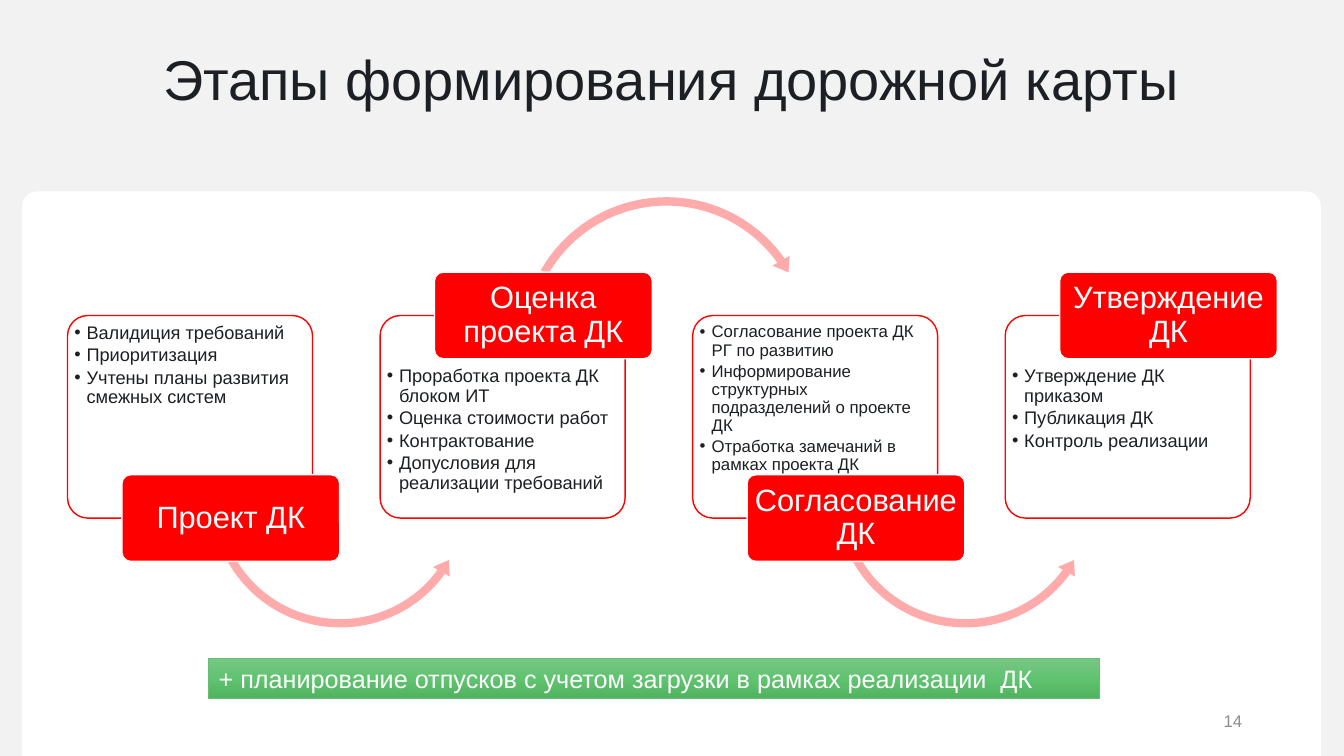
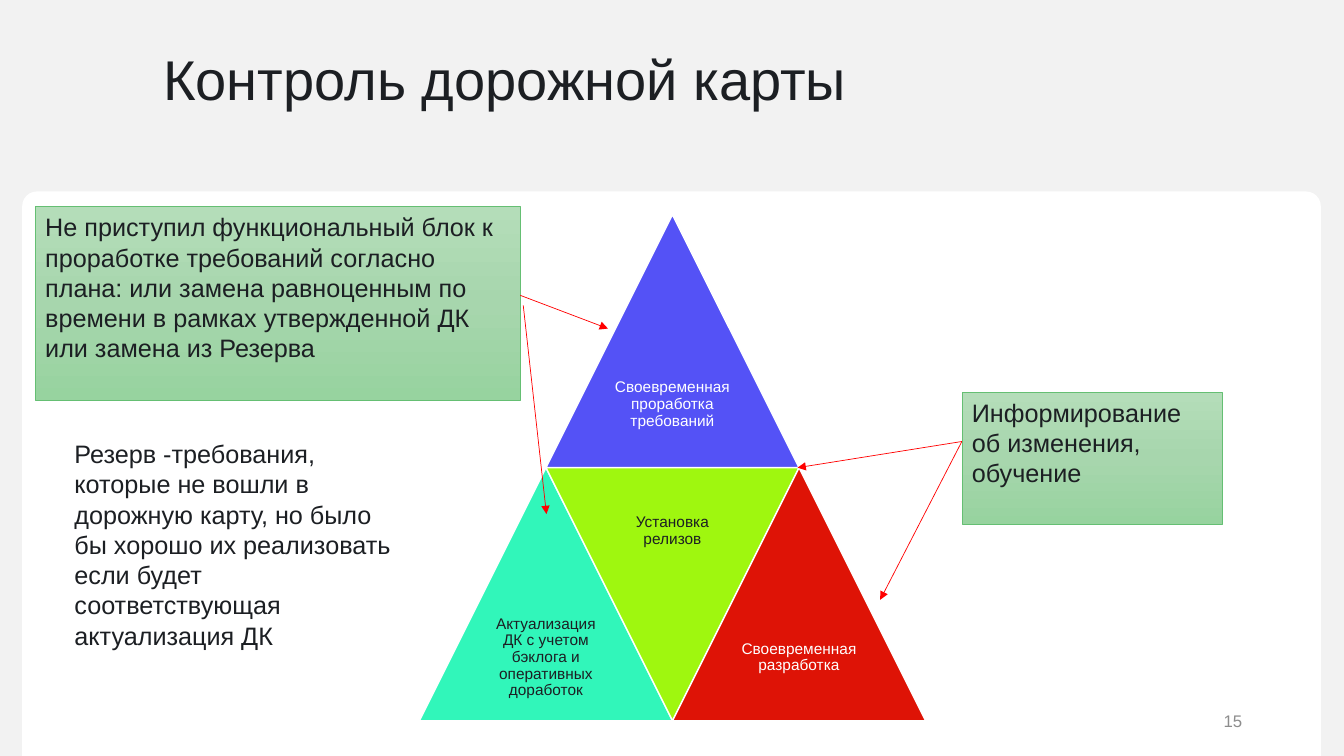
from dataclasses import dataclass
from copy import deepcopy

from lxml.etree import SubElement
from pptx import Presentation
from pptx.dml.color import RGBColor
from pptx.enum.shapes import MSO_CONNECTOR, MSO_SHAPE
from pptx.enum.text import MSO_ANCHOR, PP_ALIGN
from pptx.oxml.ns import qn
from pptx.shapes.autoshape import Shape
from pptx.slide import Slide
from pptx.util import Inches, Pt

FONT = "Arial"
BACKDROP, WHITE, INK, GRAY = "F2F2F2", "FFFFFF", "1C1F23", "8D8D8D"
RED, PINK, GREEN_EDGE = "FF0000", "FFABAB", "65BF73"
VIVID_GREENS = ("79C684", "60C370", "51B360")
PALE_GREENS = ("B4DDB9", "A7D6AD", "97D39F")

CARD_LEFT, CARD_TOP, CARD_PITCH = 0.67, 3.13, 3.1
TAG_SHIFT, TAG_HIGH, TAG_LOW = 0.54, 2.7, 4.71
APEX_X, APEX_Y, SIDE = 6.67, 2.13, 2.51


@dataclass(frozen=True)
class Area:
    left: float
    top: float
    width: float
    height: float

    def lengths(self) -> list[Inches]:
        return [Inches(n) for n in (self.left, self.top, self.width, self.height)]


@dataclass(frozen=True)
class TextStyle:
    size: float
    color: str = INK
    align: PP_ALIGN = PP_ALIGN.LEFT
    anchor: MSO_ANCHOR = MSO_ANCHOR.TOP
    spacing: float = 1.0
    after: float = 0
    bullet: bool = False
    insets: tuple[float, float, float, float] = (0.1, 0.05, 0.1, 0.05)


@dataclass(frozen=True)
class Stage:
    name: str
    tasks: tuple[str, ...]
    size: float = 13


@dataclass(frozen=True)
class Triangle:
    label: str
    column: float
    row: int
    fill: str
    ink: str
    flipped: bool = False


@dataclass(frozen=True)
class Arrow:
    start: tuple[float, float]
    end: tuple[float, float]


STAGES = (
    Stage("Проект ДК", (
        "Валидиция требований",
        "Приоритизация",
        "Учтены планы развития смежных систем",
    )),
    Stage("Оценка проекта ДК", (
        "Проработка проекта ДК блоком ИТ",
        "Оценка стоимости работ",
        "Контрактование",
        "Допусловия для реализации требований",
    )),
    Stage("Согласование ДК", (
        "Согласование проекта ДК РГ по развитию",
        "Информирование структурных подразделений о проекте ДК",
        "Отработка замечаний в рамках проекта ДК",
    ), 12),
    Stage("Утверждение ДК", (
        "Утверждение ДК приказом",
        "Публикация ДК",
        "Контроль реализации",
    )),
)

# Columns count triangle sides from the apex; rows count down from the top.
TRIANGLES = (
    Triangle("Своевременная проработка требований", 0, 0, "5452F6", WHITE),
    Triangle("Актуализация ДК с учетом бэклога и оперативных доработок",
             -0.5, 1, "31F6BA", INK),
    Triangle("Установка релизов", 0, 1, "9FF70F", INK, flipped=True),
    Triangle("Своевременная разработка", 0.5, 1, "DE1306", WHITE),
)

ARROWS = (
    Arrow((5.19, 3.03), (5.42, 5.1)),
    Arrow((5.16, 2.93), (6.03, 3.26)),
    Arrow((9.54, 4.38), (7.91, 4.64)),
    Arrow((9.54, 4.38), (8.73, 5.95)),
)


def rgb(color: str) -> RGBColor:
    return RGBColor.from_string(color)


def add_bullet(para) -> None:
    properties = para._p.get_or_add_pPr()
    properties.set("marL", str(Inches(0.12)))
    properties.set("indent", str(Inches(-0.12)))
    SubElement(properties, qn("a:buFont")).set("typeface", FONT)
    SubElement(properties, qn("a:buChar")).set("char", "•")


def write(box: Shape, lines: tuple[str, ...], style: TextStyle) -> None:
    frame = box.text_frame
    frame.word_wrap = True
    frame.vertical_anchor = style.anchor
    (frame.margin_left, frame.margin_top,
     frame.margin_right, frame.margin_bottom) = map(Inches, style.insets)
    for index, line in enumerate(lines):
        para = frame.add_paragraph() if index else frame.paragraphs[0]
        para.text = line
        if style.bullet:
            add_bullet(para)
        para.alignment = style.align
        para.line_spacing = style.spacing
        para.space_after = Pt(style.after)
        para.font.name = FONT
        para.font.size = Pt(style.size)
        para.font.color.rgb = rgb(style.color)


def add_text(page: Slide, area: Area, text: str, style: TextStyle) -> None:
    write(page.shapes.add_textbox(*area.lengths()), (text,), style)


def add_figure(page: Slide, kind: MSO_SHAPE, area: Area, fill: str,
               line: str | None = None,
               adjustments: tuple[float, ...] = ()) -> Shape:
    figure = page.shapes.add_shape(kind, *area.lengths())
    figure.shadow.inherit = False
    figure.fill.solid()
    figure.fill.fore_color.rgb = rgb(fill)
    if line:
        figure.line.color.rgb = rgb(line)
        figure.line.width = Pt(1)
    else:
        figure.line.fill.background()
    for index, value in enumerate(adjustments):
        figure.adjustments[index] = value
    return figure


def add_green_note(page: Slide, area: Area, text: str,
                   greens: tuple[str, str, str], ink: str) -> None:
    note = add_figure(page, MSO_SHAPE.RECTANGLE, area, greens[0], GREEN_EDGE)
    note.line.width = Pt(0.5)
    note.fill.gradient()
    note.fill.gradient_angle = 270
    stops = note.element.spPr.find(".//" + qn("a:gsLst"))
    stops.append(deepcopy(stops[-1]))
    for index, stop in enumerate(note.fill.gradient_stops):
        stop.position = index / 2
        stop.color.rgb = rgb(greens[index])
    write(note, (text,), TextStyle(18, ink))


def add_arrow(page: Slide, arrow: Arrow) -> None:
    ends = [Inches(n) for n in (*arrow.start, *arrow.end)]
    connector = page.shapes.add_connector(MSO_CONNECTOR.STRAIGHT, *ends)
    connector.line.color.rgb = rgb(RED)
    connector.line.width = Pt(0.5)
    SubElement(connector.line._get_or_add_ln(), qn("a:tailEnd")).set("type", "triangle")
    SubElement(connector.element.spPr, qn("a:effectLst"))


def add_page(deck: Presentation, title: str, title_width: float, number: int) -> Slide:
    page = deck.slides.add_slide(deck.slide_layouts[6])
    add_figure(page, MSO_SHAPE.ROUND_2_SAME_RECTANGLE, Area(0.22, 1.9, 12.88, 5.6),
               WHITE, adjustments=(0.026, 0))
    add_text(page, Area(1.52, 0.35, title_width, 0.94), title,
             TextStyle(40, anchor=MSO_ANCHOR.MIDDLE, spacing=0.9))
    add_text(page, Area(9.42, 6.95, 3, 0.4), str(number),
             TextStyle(12, GRAY, PP_ALIGN.RIGHT, MSO_ANCHOR.MIDDLE))
    return page


def add_turn(page: Slide, left: float, tag_is_high: bool) -> None:
    """Draw the curved arrow that leads from one stage to the next."""
    if tag_is_high:
        add_figure(page, MSO_SHAPE.CIRCULAR_ARROW, Area(left + 1.35, 1.9, 2.98, 2.98),
                   PINK, adjustments=(0.028, 3.402, 194.843, 125.755, 0.033))
    else:
        add_figure(page, MSO_SHAPE.LEFT_CIRCULAR_ARROW, Area(left + 1.37, 3.61, 2.67, 2.67),
                   PINK, adjustments=(0.031, 3.826, 21.582, 90.245, 0.036))


def add_stage(page: Slide, index: int, stage: Stage) -> None:
    left = CARD_LEFT + index * CARD_PITCH
    tag_is_high = index % 2 == 1
    card = add_figure(page, MSO_SHAPE.ROUNDED_RECTANGLE,
                      Area(left, CARD_TOP, 2.43, 2.01), WHITE, RED, (0.1,))
    top_inset = 0.45 if tag_is_high else 0.02
    write(card, stage.tasks,
          TextStyle(stage.size, spacing=0.9, after=2, bullet=True,
                    insets=(0.01, top_inset, 0.02, 0)))
    if index < len(STAGES) - 1:
        add_turn(page, left, tag_is_high)
    tag_top = TAG_HIGH if tag_is_high else TAG_LOW
    tag = add_figure(page, MSO_SHAPE.ROUNDED_RECTANGLE,
                     Area(left + TAG_SHIFT, tag_top, 2.16, 0.86), RED, WHITE, (0.1,))
    write(tag, (stage.name,),
          TextStyle(22, WHITE, PP_ALIGN.CENTER, MSO_ANCHOR.MIDDLE, 0.9,
                    insets=(0.03, 0.03, 0.03, 0.03)))


def add_triangle(page: Slide, triangle: Triangle) -> None:
    left = APEX_X + (triangle.column - 0.5) * SIDE
    top = APEX_Y + triangle.row * SIDE
    figure = add_figure(page, MSO_SHAPE.ISOSCELES_TRIANGLE,
                        Area(left, top, SIDE, SIDE), triangle.fill, WHITE)
    figure.rotation = 180 if triangle.flipped else 0
    label_top = top if triangle.flipped else top + SIDE / 2
    add_text(page, Area(left + SIDE / 4, label_top, SIDE / 2, SIDE / 2), triangle.label,
             TextStyle(11, triangle.ink, PP_ALIGN.CENTER, MSO_ANCHOR.MIDDLE, 0.9,
                       insets=(0.05, 0.05, 0.05, 0.05)))


def build_stages(deck: Presentation) -> None:
    page = add_page(deck, "Этапы формирования дорожной карты", 10.64, 14)
    for index, stage in enumerate(STAGES):
        add_stage(page, index, stage)
    add_green_note(page, Area(2.07, 6.53, 8.83, 0.4),
                   "+ планирование отпусков с учетом загрузки в рамках реализации  ДК",
                   VIVID_GREENS, WHITE)


def build_control(deck: Presentation) -> None:
    page = add_page(deck, "Контроль дорожной карты", 9.02, 15)
    for triangle in TRIANGLES:
        add_triangle(page, triangle)
    add_green_note(page, Area(0.35, 2.05, 4.81, 1.92),
                   "Не приступил функциональный блок к проработке требований согласно "
                   "плана: или замена равноценным по времени в рамках утвержденной ДК "
                   "или замена из Резерва", PALE_GREENS, INK)
    add_text(page, Area(0.64, 4.3, 3.46, 2.22),
             "Резерв -требования, которые не вошли в дорожную карту, но было бы хорошо "
             "их реализовать если будет соответствующая актуализация ДК", TextStyle(18))
    add_green_note(page, Area(9.54, 3.89, 2.58, 1.31),
                   "Информирование об изменения, обучение", PALE_GREENS, INK)
    for arrow in ARROWS:
        add_arrow(page, arrow)


def main() -> None:
    deck = Presentation()
    deck.slide_width, deck.slide_height = Inches(13.33), Inches(7.5)
    backdrop = deck.slide_master.background.fill
    backdrop.solid()
    backdrop.fore_color.rgb = rgb(BACKDROP)
    build_stages(deck)
    build_control(deck)
    deck.save("out.pptx")


if __name__ == "__main__":
    main()
